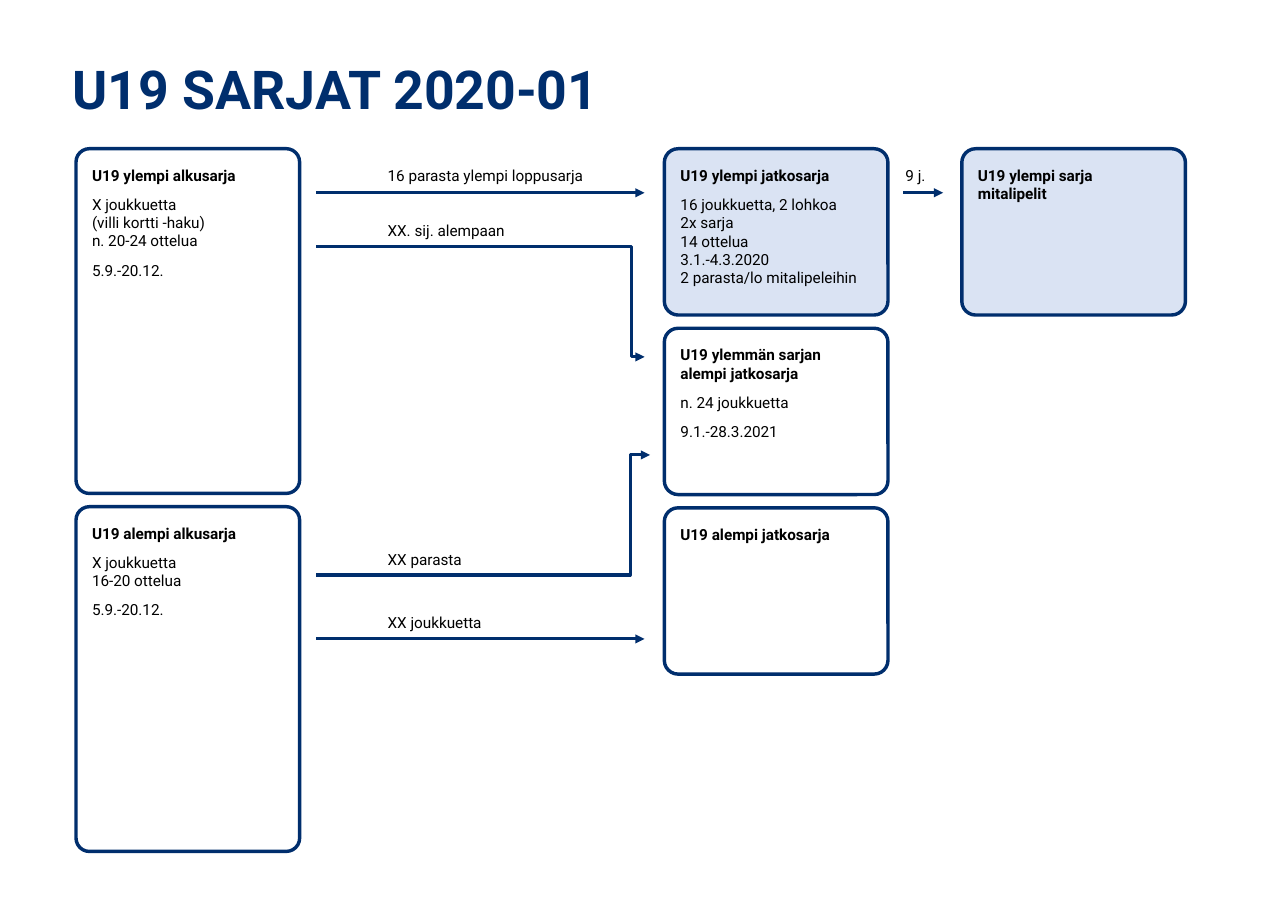
from lxml import etree
from pptx import Presentation
from pptx.dml.color import RGBColor
from pptx.enum import shapes, text
from pptx.oxml.ns import qn
from pptx.util import Inches, Pt

NAVY, PALE, BLACK = "002E6D", "DAE3F3", "000000"


def color(hex_string):
    return RGBColor.from_string(hex_string)


def style_paragraph(paragraph, size, hex_string, bold=False):
    paragraph.alignment = text.PP_ALIGN.LEFT
    paragraph.font.name = "Roboto"
    paragraph.font.size = Pt(size)
    paragraph.font.bold = bold
    paragraph.font.color.rgb = color(hex_string)


presentation = Presentation()
presentation.slide_width = Inches(11.69)
presentation.slide_height = Inches(8.27)
slide = presentation.slides.add_slide(presentation.slide_layouts[5])

title = slide.shapes.title
title.left, title.top = Inches(0.56), Inches(0.46)
title.width, title.height = Inches(9.64), Inches(0.69)
title.text_frame.text = "U19 SARJAT 2020-01"
title.text_frame.vertical_anchor = text.MSO_ANCHOR.TOP
style_paragraph(title.text_frame.paragraphs[0], 35, NAVY, bold=True)

# Series boxes: left, top, height, fill, then groups of lines (the first is the heading)
START, FOLLOW_UP, MEDALS = 0.69, 6.03, 8.73
TALL, SHORT = 3.13, 1.51
series_boxes = [
    (START, 1.35, TALL, None, [
        ["U19 ylempi alkusarja"],
        ["X joukkuetta", "(villi kortti -haku)", "n. 20-24 ottelua"],
        ["5.9.-20.12."]]),
    (START, 4.6, TALL, None, [
        ["U19 alempi alkusarja"],
        ["X joukkuetta", "16-20 ottelua"],
        ["5.9.-20.12."]]),
    (FOLLOW_UP, 1.35, SHORT, PALE, [
        ["U19 ylempi jatkosarja"],
        ["16 joukkuetta, 2 lohkoa", "2x sarja", "14 ottelua", "3.1.-4.3.2020",
         "2 parasta/lo mitalipeleihin"]]),
    (FOLLOW_UP, 2.98, SHORT, None, [
        ["U19 ylemmän sarjan", "alempi jatkosarja"],
        ["n. 24 joukkuetta"],
        ["9.1.-28.3.2021"]]),
    (FOLLOW_UP, 4.61, SHORT, None, [["U19 alempi jatkosarja"]]),
    (MEDALS, 1.35, SHORT, PALE, [["U19 ylempi sarja", "mitalipelit"]]),
]
for left, top, height, fill, groups in series_boxes:
    box = slide.shapes.add_shape(shapes.MSO_SHAPE.ROUNDED_RECTANGLE, Inches(left),
                                 Inches(top), Inches(2.03), Inches(height))
    box.adjustments[0] = 0.06 if height == TALL else 0.083
    box.shadow.inherit = False
    box.line.color.rgb = color(NAVY)
    box.line.width = Pt(2.25)
    if fill:
        box.fill.solid()
        box.fill.fore_color.rgb = color(fill)
    else:
        box.fill.background()

    frame = box.text_frame
    frame.word_wrap = True
    frame.vertical_anchor = text.MSO_ANCHOR.TOP
    frame.margin_left, frame.margin_top = Inches(0.11), Inches(0.12)
    frame.margin_right = Inches(0.05)
    paragraph = frame.paragraphs[0]
    for group_index, lines in enumerate(groups):
        for line_index, line in enumerate(lines):
            if group_index or line_index:
                paragraph = frame.add_paragraph()
            paragraph.text = line
            style_paragraph(paragraph, 10, BLACK, bold=group_index == 0)
            if group_index and line_index == 0:
                paragraph.space_before = Pt(7)

# Arrows: start, end, and the bend as a share of the width for elbows
arrows = [
    ((2.87, 1.75), (5.85, 1.75), None),
    ((2.87, 2.24), (5.85, 3.24), 0.961),
    ((2.87, 5.22), (5.9, 4.13), 0.941),
    ((2.87, 5.8), (5.85, 5.8), None),
    ((8.2, 1.75), (8.56, 1.75), None),
]
for start, end, bend in arrows:
    kind = shapes.MSO_CONNECTOR.ELBOW if bend else shapes.MSO_CONNECTOR.STRAIGHT
    arrow = slide.shapes.add_connector(kind, *map(Inches, start + end))
    arrow.line.color.rgb = color(NAVY)
    arrow.line.width = Pt(2)
    properties = arrow.element.spPr
    etree.SubElement(properties.find(qn("a:ln")), qn("a:tailEnd"), type="triangle")
    etree.SubElement(properties, qn("a:effectLst"))
    if bend:
        adjustments = properties.find(qn("a:prstGeom")).find(qn("a:avLst"))
        etree.SubElement(adjustments, qn("a:gd"), name="adj1",
                         fmla=f"val {round(bend * 100000)}")

arrow_labels = [
    ("16 parasta ylempi loppusarja", 3.42, 1.46, 2.24),
    ("XX. sij. alempaan", 3.42, 1.96, 2.24),
    ("XX parasta", 3.42, 4.95, 1.81),
    ("XX joukkuetta", 3.42, 5.52, 1.81),
    ("9 j.", 8.12, 1.46, 0.49),
]
for wording, left, top, width in arrow_labels:
    label = slide.shapes.add_textbox(Inches(left), Inches(top), Inches(width), Inches(0.27))
    label.text_frame.word_wrap = True
    label.text_frame.text = wording
    style_paragraph(label.text_frame.paragraphs[0], 10, BLACK)

presentation.save("out.pptx")
